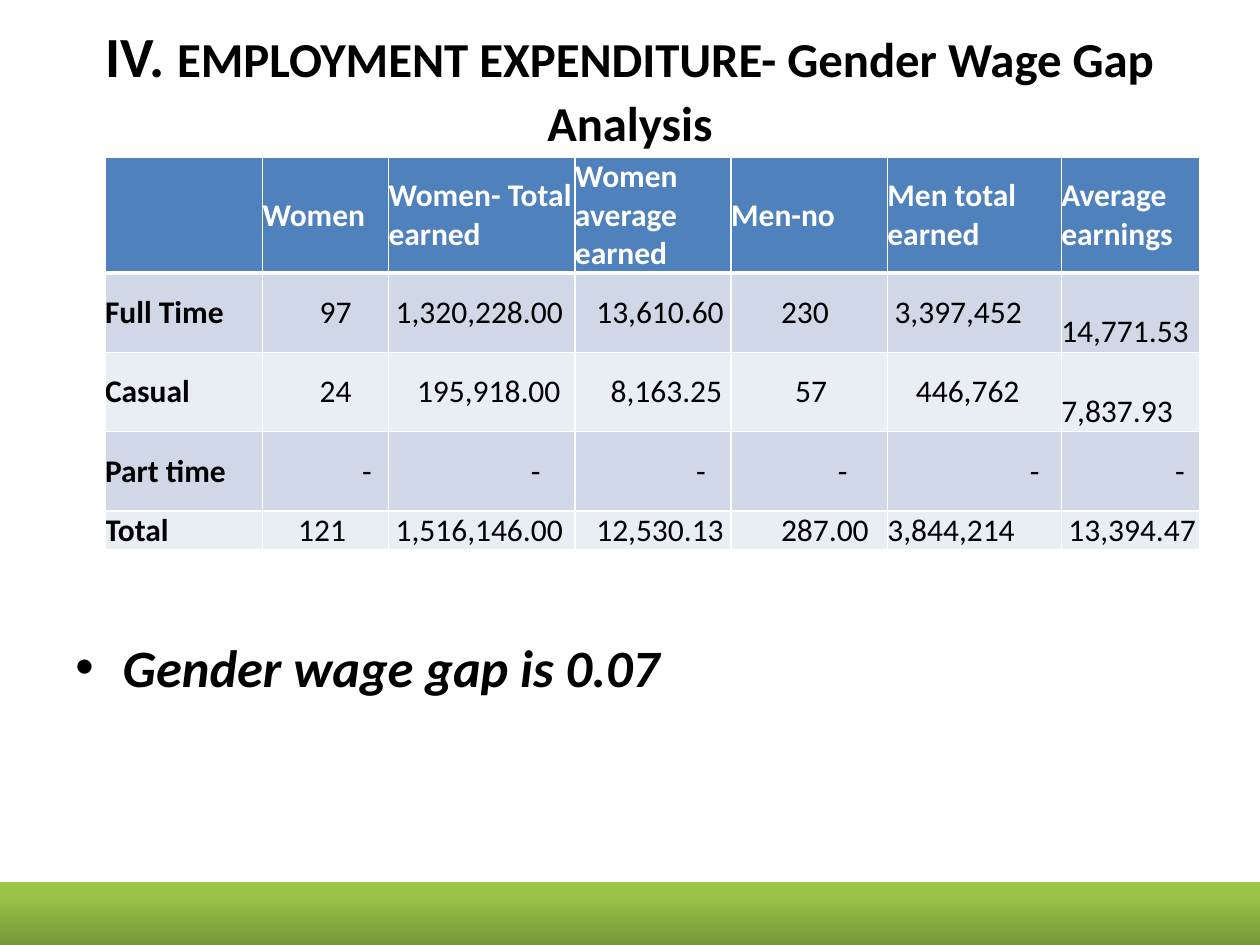
from copy import deepcopy

from lxml.etree import SubElement
from pptx import Presentation
from pptx.dml.color import RGBColor
from pptx.enum.shapes import MSO_SHAPE
from pptx.enum.text import MSO_ANCHOR, PP_ALIGN
from pptx.oxml.ns import qn
from pptx.util import Pt

# Content
TITLE = [("IV. ", 32.4), ("EMPLOYMENT EXPENDITURE- Gender Wage Gap Analysis", 27.9)]
FINDING = "Gender wage gap is 0.07"
HEADINGS = ["", "Women", "Women- Total earned", "Women average earned",
            "Men-no", "Men total earned", "Average earnings"]
RECORDS = [
    ["Full Time", "97", "1,320,228.00", "13,610.60", "230", "3,397,452", "14,771.53"],
    ["Casual", "24", "195,918.00", "8,163.25", "57", "446,762", "7,837.93"],
    ["Part time", "-", "-", "-", "-", "-", "-"],
    ["Total", "121", "1,516,146.00", "12,530.13", "287.00", "3,844,214", "13,394.47"],
]

# Layout in points; indents are per record and column
COLUMN_WIDTHS = [90, 72, 106.56, 89.28, 89.28, 99.36, 79.2]
ROW_HEIGHTS = [66, 45.36, 45.36, 45.36, 21.96]
INDENTS = [
    [0, 32.6, 4.1, 12.2, 28.5, 4.1, 0],
    [0, 32.6, 16.3, 20.4, 36.6, 16.3, 0],
    [0, 57, 81.4, 69.2, 61, 81.4, 65.1],
    [0, 20.4, 4.1, 12.2, 28.5, 0, 4.1],
]
LOWERED = {(1, 6): 22, (2, 6): 22}  # averages set lower in their cells
BANDS = ["D0D8E8", "E9EDF4"]
FOOTER_STOPS = [(0, "779737"), (0.8, "9BC348"), (1, "9DC746")]


def color(value):
    return RGBColor.from_string(value)


def apply(target, formats):
    for name, value in formats.items():
        setattr(target, name, value)


def add_run(paragraph, text, size, ink="000000", bold=True, italic=False):
    run = paragraph.add_run()
    run.text = text
    apply(run.font, {"name": "Calibri", "size": Pt(size), "bold": bold, "italic": italic})
    run.font.color.rgb = color(ink)


def add_text_frame(slide, left, top, width, height, formats):
    frame = slide.shapes.add_textbox(Pt(left), Pt(top), Pt(width), Pt(height)).text_frame
    apply(frame, {"word_wrap": True, **formats})
    return frame


def add_borders(cell, widths):
    properties = cell._tc.get_or_add_tcPr()
    for index, (side, width) in enumerate(zip("LRTB", widths)):
        line = SubElement(properties, qn(f"a:ln{side}"), w=str(Pt(width)))
        fill = SubElement(line, qn("a:solidFill"))
        SubElement(fill, qn("a:srgbClr"), val="FFFFFF")
        properties.insert(index, line)


def add_title(slide):
    frame = add_text_frame(slide, 36, 21.6, 648, 90, {
        "vertical_anchor": MSO_ANCHOR.MIDDLE, "margin_bottom": Pt(41)})
    heading = frame.paragraphs[0]
    apply(heading, {"alignment": PP_ALIGN.CENTER, "line_spacing": 1.07})
    for text, size in TITLE:
        add_run(heading, text, size)


def add_footer(slide):
    footer = slide.shapes.add_shape(MSO_SHAPE.RECTANGLE, 0, Pt(504), Pt(735), Pt(36.72))
    footer.shadow.inherit = False
    footer.line.fill.background()
    footer.fill.gradient()
    footer.fill.gradient_angle = 90
    stop_list = footer._element.spPr.find(qn("a:gradFill")).find(qn("a:gsLst"))
    stop_list.append(deepcopy(stop_list[-1]))
    for stop, (position, shade) in zip(footer.fill.gradient_stops, FOOTER_STOPS):
        stop.color.rgb = color(shade)
        stop.position = position


def add_finding(slide):
    finding = add_text_frame(slide, 36, 359.28, 606.24, 161.28, {}).paragraphs[0]
    finding.space_before = Pt(6)
    properties = finding._p.get_or_add_pPr()
    properties.set("marL", str(Pt(27)))
    properties.set("indent", str(Pt(-27)))
    SubElement(properties, qn("a:buFont"), typeface="Arial")
    SubElement(properties, qn("a:buChar"), char="•")
    add_run(finding, FINDING, 30, italic=True)


def add_wage_table(slide):
    wages = slide.shapes.add_table(
        len(ROW_HEIGHTS), len(COLUMN_WIDTHS), Pt(60), Pt(90),
        Pt(sum(COLUMN_WIDTHS)), Pt(sum(ROW_HEIGHTS))).table
    for column, width in zip(wages.columns, COLUMN_WIDTHS):
        column.width = Pt(width)
    for row, height in zip(wages.rows, ROW_HEIGHTS):
        row.height = Pt(height)

    indents = [[0] * len(HEADINGS)] + INDENTS
    for r, values in enumerate([HEADINGS] + RECORDS):
        header = r == 0
        for c, value in enumerate(values):
            cell = wages.cell(r, c)
            apply(cell, {
                "vertical_anchor": MSO_ANCHOR.MIDDLE,
                "margin_left": Pt(indents[r][c]), "margin_right": 0,
                "margin_top": Pt(LOWERED.get((r, c), 0)), "margin_bottom": 0})
            cell.fill.solid()
            cell.fill.fore_color.rgb = color("4F81BD" if header else BANDS[(r - 1) % 2])
            add_borders(cell, [1, 1, 3 if r == 1 else 1, 3 if header else 1])
            if value:
                add_run(cell.text_frame.paragraphs[0], value, 18,
                        "FFFFFF" if header else "000000", bold=header or c == 0)


def main():
    deck = Presentation()
    apply(deck, {"slide_width": Pt(720), "slide_height": Pt(540)})
    slide = deck.slides.add_slide(deck.slide_layouts[6])
    add_title(slide)
    add_footer(slide)
    add_finding(slide)
    add_wage_table(slide)
    deck.save("out.pptx")


if __name__ == "__main__":
    main()
